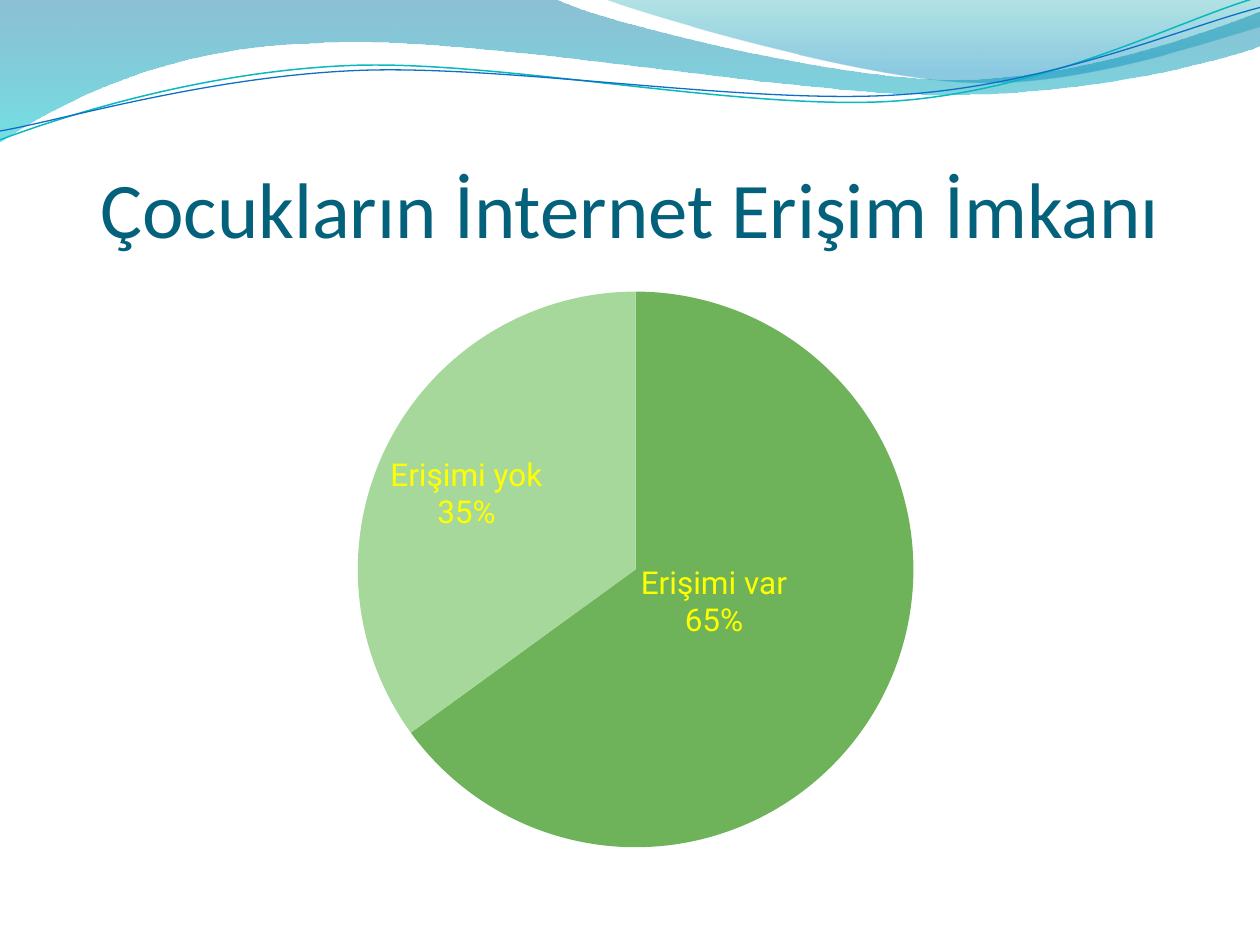
import math

import lxml.etree
import pptx
import pptx.chart.data
import pptx.dml.color
import pptx.enum.chart
import pptx.enum.text
import pptx.oxml.ns
import pptx.util

qn = pptx.oxml.ns.qn

# The slide is a grid of 10 columns by 7.5 rows of square cells
CELL = pptx.util.Inches(1)


class Theme:
    title = {"name": "Calibri", "size": pptx.util.Pt(45), "bold": False}
    chart = {"name": "Vollkorn", "size": pptx.util.Pt(18), "bold": False}
    label = {"name": "Roboto", "size": pptx.util.Pt(18), "bold": False}
    teal, yellow = "04617B", "FFFF00"
    slices = ["6EB359", "A7D89B"]
    # Gradient stops: place, colour, opacity in percent
    wide = [(0, "0074A1", 45), (1, "00C6CF", 55)]
    crest = [(0, "00A1A9", 30), (0.8, "008BBF", 45)]
    # Line colour, width
    strands = [("0AB8BF", 0.85), ("0F6FC6", 0.75)]


def cells(n):
    return pptx.util.Emu(round(n * CELL))


def rgb(code):
    return pptx.dml.color.RGBColor.from_string(code)


def apply(item, values):
    for key, value in values.items():
        setattr(item, key, value)


def place(item, box):
    apply(item, dict(zip(("left", "top", "width", "height"), map(cells, box))))


def draw(shapes, steps, move, closed):
    """Outline from points and (control, control, end) curves."""
    dots = [tuple(map(cells, move(*step[i:i + 2])))
            for step in steps for i in range(0, len(step), 2)]
    maker = shapes.build_freeform(*dots[0], scale=1.0)
    maker.add_line_segments(dots[1:], close=closed)
    shape = maker.convert_to_shape()
    shape.shadow.inherit = False
    # Merge the three points of each curve into one Bezier segment
    legs = iter(list(shape._element.spPr.iter(qn("a:lnTo"))))
    for step in steps[1:]:
        leg = next(legs)
        if len(step) == 6:
            leg.tag = qn("a:cubicBezTo")
            for other in (next(legs), next(legs)):
                leg.append(other[0])
                other.getparent().remove(other)
    return shape


def wave(shapes, origin, steps, stops):
    left, top = origin
    shape = draw(shapes, steps, lambda x, y: (left + x, top + y), True)
    shape.line.fill.background()
    shape.fill.gradient()
    shape.fill.gradient_angle = 270
    for stop, (spot, code, _) in zip(shape.fill.gradient_stops, stops):
        stop.position = spot
        stop.color.rgb = rgb(code)
    tints = shape._element.spPr.iter(qn("a:srgbClr"))
    for tint, (_, _, share) in zip(tints, stops):
        lxml.etree.SubElement(tint, qn("a:alpha")).set("val", str(share * 1000))


def strand(shapes, origin, steps, center, pen, turn=-2.7):
    # Level the curve about its center, then tilt the whole shape back
    left, top = origin
    cx, cy = center
    cos, sin = math.cos(math.radians(-turn)), math.sin(math.radians(-turn))

    def level(x, y):
        return (left + cx + (x - cx) * cos - (y - cy) * sin,
                top + cy + (x - cx) * sin + (y - cy) * cos)

    shape = draw(shapes, steps, level, False)
    shape.rotation = turn
    shape.fill.background()
    code, width = pen
    shape.line.color.rgb = rgb(code)
    shape.line.width = pptx.util.Pt(width)


def banner(slide, origin):
    # Two translucent waves
    wave(slide.shapes, origin, [
        (0, 0), (4.4, -0.01), (4.76, 0.17, 6.64, 0.63, 7.58, 0.63),
        (8.53, 0.63, 9.58, 0.26, 10, 0.09), (10.01, 0.36),
        (9.83, 0.44, 8.7, 0.76, 7.46, 0.75),
        (6.22, 0.75, 3.82, 0.28, 2.57, 0.34),
        (1.29, 0.36, 0.46, 0.83, -0.01, 1.13)], Theme.wide)
    wave(slide.shapes, origin, [
        (4.79, -0.01), (5.09, 0.11, 6.82, 0.62, 7.69, 0.65),
        (8.56, 0.69, 9.61, 0.32, 10, 0.21), (10, 0)], Theme.crest)
    # Two thin strands
    group = slide.shapes.add_group_shape()
    strand(group.shapes, origin, [
        (0, 1.11), (0.48, 0.93, 1.58, 0.57, 2.77, 0.52),
        (3.95, 0.47, 5.93, 0.89, 7.13, 0.8),
        (8.33, 0.71, 9.38, 0.15, 9.98, -0.02)], (4.99, 0.57), Theme.strands[0])
    strand(group.shapes, origin, [
        (0, 1.04), (0.47, 0.96, 1.64, 0.61, 2.83, 0.56),
        (4.03, 0.51, 5.97, 0.84, 7.17, 0.75),
        (8.36, 0.67, 9.41, 0.21, 10, 0.06)], (5, 0.59), Theme.strands[1])


def heading(slide, box, text):
    title = slide.shapes.title
    place(title, box)
    frame = title.text_frame
    apply(frame, {
        "text": text, "word_wrap": True,
        "auto_size": pptx.enum.text.MSO_AUTO_SIZE.NONE,
        "vertical_anchor": pptx.enum.text.MSO_ANCHOR.BOTTOM,
        "margin_left": 0, "margin_right": 0,
        "margin_top": cells(0.05), "margin_bottom": 0})
    line = frame.paragraphs[0]
    line.alignment = pptx.enum.text.PP_ALIGN.CENTER
    font = line.runs[0].font
    apply(font, Theme.title)
    font.color.rgb = rgb(Theme.teal)
    # Bring the heading in front of the banner
    slide.shapes._spTree.append(title._element)


def layout(values):
    """Manual chart layout from a dict of part names and values."""
    root = lxml.etree.Element(qn("c:layout"))
    manual = lxml.etree.SubElement(root, qn("c:manualLayout"))
    for key, value in values.items():
        lxml.etree.SubElement(manual, qn("c:" + key)).set("val", str(value))
    return root


def pie(slide, box, shares, shifts):
    data = pptx.chart.data.CategoryChartData()
    data.categories = list(shares)
    data.add_series("Series 1", list(shares.values()))
    kind = pptx.enum.chart.XL_CHART_TYPE.PIE
    chart = slide.shapes.add_chart(kind, *map(cells, box), data).chart
    apply(chart, {"has_legend": False, "has_title": False})
    apply(chart.font, Theme.chart)
    plot = chart.plots[0]
    plot.vary_by_categories = True

    # Plot area
    area = chart._chartSpace.chart.plotArea
    for old in area.findall(qn("c:layout")):
        area.remove(old)
    area.insert(0, layout({
        "layoutTarget": "inner", "xMode": "edge", "yMode": "edge",
        "x": 0.26, "y": 0.04, "w": 0.49, "h": 0.92}))

    # Slices and their labels
    for i, (code, (dx, dy)) in enumerate(zip(Theme.slices, shifts)):
        point = plot.series[0].points[i]
        point.format.fill.solid()
        point.format.fill.fore_color.rgb = rgb(code)
        point.format.line.fill.background()
        label = point.data_label
        apply(label.font, Theme.label)
        label.font.color.rgb = rgb(Theme.yellow)
        label.position = pptx.enum.chart.XL_LABEL_POSITION.CENTER
        node = label._dLbl
        node.insert(1, layout({"x": dx, "y": dy}))
        for key, on in {"showVal": 0, "showCatName": 1, "showPercent": 1}.items():
            node.find(qn("c:" + key)).set("val", str(on))
        lxml.etree.SubElement(node, qn("c:separator")).text = "\n"


def main():
    deck = pptx.Presentation()
    deck.slide_width, deck.slide_height = cells(10), cells(7.5)
    slide = deck.slides.add_slide(deck.slide_layouts[5])
    banner(slide, (0, 0))
    heading(slide, (0.5, 0.77, 9, 1.25), "Çocukların İnternet Erişim İmkanı")
    pie(slide, (0.5, 2.12, 9, 4.8), {"Erişimi var": 65, "Erişimi yok": 35},
        [(-0.04, -0.05), (-0.04, -0.02)])
    deck.save("out.pptx")


if __name__ == "__main__":
    main()
